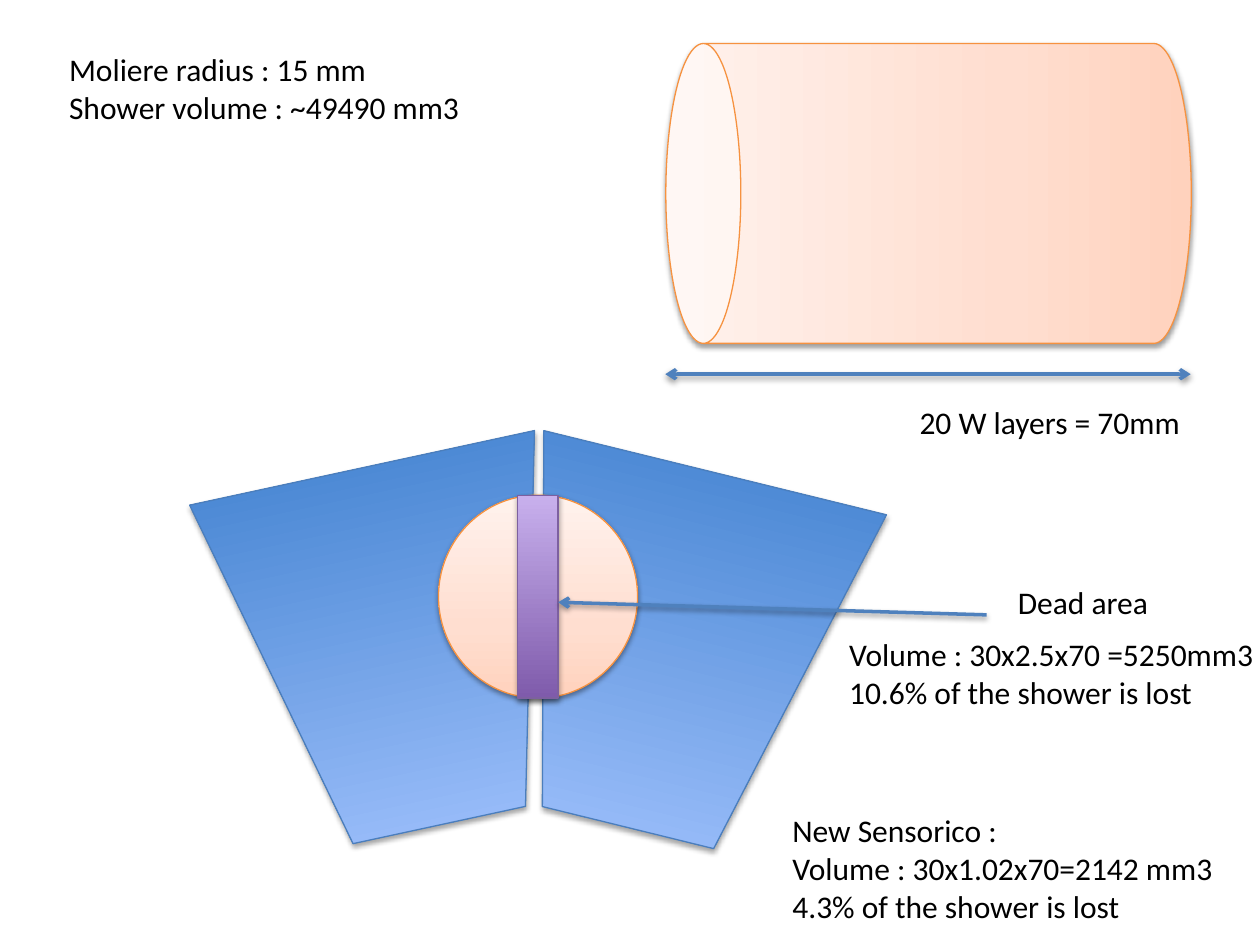
"""Build a slide comparing shower volume with the dead area between detector modules."""
import pptx
import pptx.dml.color
import pptx.enum.shapes
import pptx.enum.text
import pptx.oxml
import pptx.oxml.ns
import pptx.util

Inches = pptx.util.Inches
Pt = pptx.util.Pt
Shape = pptx.enum.shapes.MSO_SHAPE

COLOURS = {
    "text": "000000",
    "shadow": "000000",
    "arrow": "4F81BD",
    "shower_line": "F69240",
    "module_line": "4B7EBC",
    "dead_line": "7D60A0",
}
GRADIENTS = {
    "shower": [(0, "FFD2BD"), (35, "FFDED0"), (100, "FFF2ED")],
    "module": [(0, "3F80CE"), (100, "A4C4FF")],
    "dead": [(0, "7F5BAB"), (100, "C8B0ED")],
}
SOFT_SHADOW = (38, 1.6)
DEEP_SHADOW = (35, 1.8)


def colour(name):
    """Return the named colour."""
    return pptx.dml.color.RGBColor.from_string(COLOURS[name])


def parse_xml(text):
    """Turn a drawing fragment into an element."""
    namespace = pptx.oxml.ns.nsdecls("a")
    return pptx.oxml.parse_xml(text.replace(">", f" {namespace}>", 1))


def add_shadow(item, shadow):
    """Give a shape or connector a blurred shadow straight below it."""
    alpha, distance = shadow
    item._element.spPr.append(parse_xml(
        '<a:effectLst>'
        f'<a:outerShdw blurRad="{Pt(3.1)}" dist="{Pt(distance)}" dir="5400000" rotWithShape="0">'
        f'<a:srgbClr val="{COLOURS["shadow"]}"><a:alpha val="{alpha * 1000}"/></a:srgbClr>'
        '</a:outerShdw></a:effectLst>'))


def add_solid(page, kind, place, style, shadow, rotation=0):
    """Draw an outlined preset shape with a vertical gradient."""
    shape = page.shapes.add_shape(kind, *map(Inches, place))
    shape.rotation = rotation
    shape.fill.gradient()
    shape.fill.gradient_angle = 90
    stops = shape._element.spPr.find(".//" + pptx.oxml.ns.qn("a:gsLst"))
    for stop in list(stops):
        stops.remove(stop)
    for position, value in GRADIENTS[style]:
        stops.append(parse_xml(
            f'<a:gs pos="{position * 1000}"><a:srgbClr val="{value}"/></a:gs>'))
    shape.line.color.rgb = colour(style + "_line")
    shape.line.width = Pt(0.75)
    add_shadow(shape, shadow)


def add_arrow(page, start, end, tips):
    """Draw a straight line with open arrowheads at the given tips."""
    arrow = page.shapes.add_connector(
        pptx.enum.shapes.MSO_CONNECTOR.STRAIGHT, *map(Inches, start + end))
    arrow.line.color.rgb = colour("arrow")
    arrow.line.width = Pt(2)
    for tip in tips:
        arrow.line._get_or_add_ln().append(parse_xml(f'<a:{tip} type="arrow"></a:{tip}>'))
    add_shadow(arrow, SOFT_SHADOW)


def add_label(page, place, *lines):
    """Write one paragraph for each line of a label."""
    frame = page.shapes.add_textbox(*map(Inches, place)).text_frame
    frame.word_wrap = False
    frame.auto_size = pptx.enum.text.MSO_AUTO_SIZE.SHAPE_TO_FIT_TEXT
    frame.text = "\n".join(lines)
    for para in frame.paragraphs:
        para.font.name = "Calibri"
        para.font.size = Pt(18)
        para.font.color.rgb = colour("text")


def main():
    """Compose the slide and save it."""
    deck = pptx.Presentation()
    deck.slide_width, deck.slide_height = Inches(10), Inches(7.5)
    page = deck.slides.add_slide(deck.slide_layouts[6])

    add_solid(page, Shape.CAN, (6.18, -0.55, 2.38, 4.17), "shower", SOFT_SHADOW, 270)
    add_solid(page, Shape.TRAPEZOID, (3.93, 3.71, 2.8, 2.9), "module", DEEP_SHADOW, 193.8)
    add_solid(page, Shape.TRAPEZOID, (1.78, 3.68, 2.8, 2.9), "module", DEEP_SHADOW, 167.8)
    add_solid(page, Shape.OVAL, (3.48, 3.93, 1.58, 1.61), "shower", SOFT_SHADOW)
    add_label(page, (0.45, 0.35, 3.34, 0.71),
              "Moliere radius : 15 mm", "Shower volume : ~49490 mm3")
    add_arrow(page, (9.45, 2.97), (5.28, 2.97), ["headEnd", "tailEnd"])
    add_label(page, (7.2, 3.15, 2.3, 0.4), "20 W layers = 70mm")
    add_solid(page, Shape.RECTANGLE, (4.11, 3.93, 0.32, 1.61), "dead", DEEP_SHADOW)
    add_arrow(page, (7.83, 4.88), (4.43, 4.78), ["tailEnd"])
    add_label(page, (7.98, 4.58, 1.25, 0.4), "Dead area")
    add_label(page, (6.64, 4.99, 3.45, 0.71),
              "Volume : 30x2.5x70 =5250mm3", "10.6% of the shower is lost")
    add_label(page, (6.19, 6.39, 3.58, 1.31),
              "New Sensorico :", "Volume : 30x1.02x70=2142 mm3", "4.3% of the shower is lost")

    deck.save("out.pptx")


if __name__ == "__main__":
    main()
